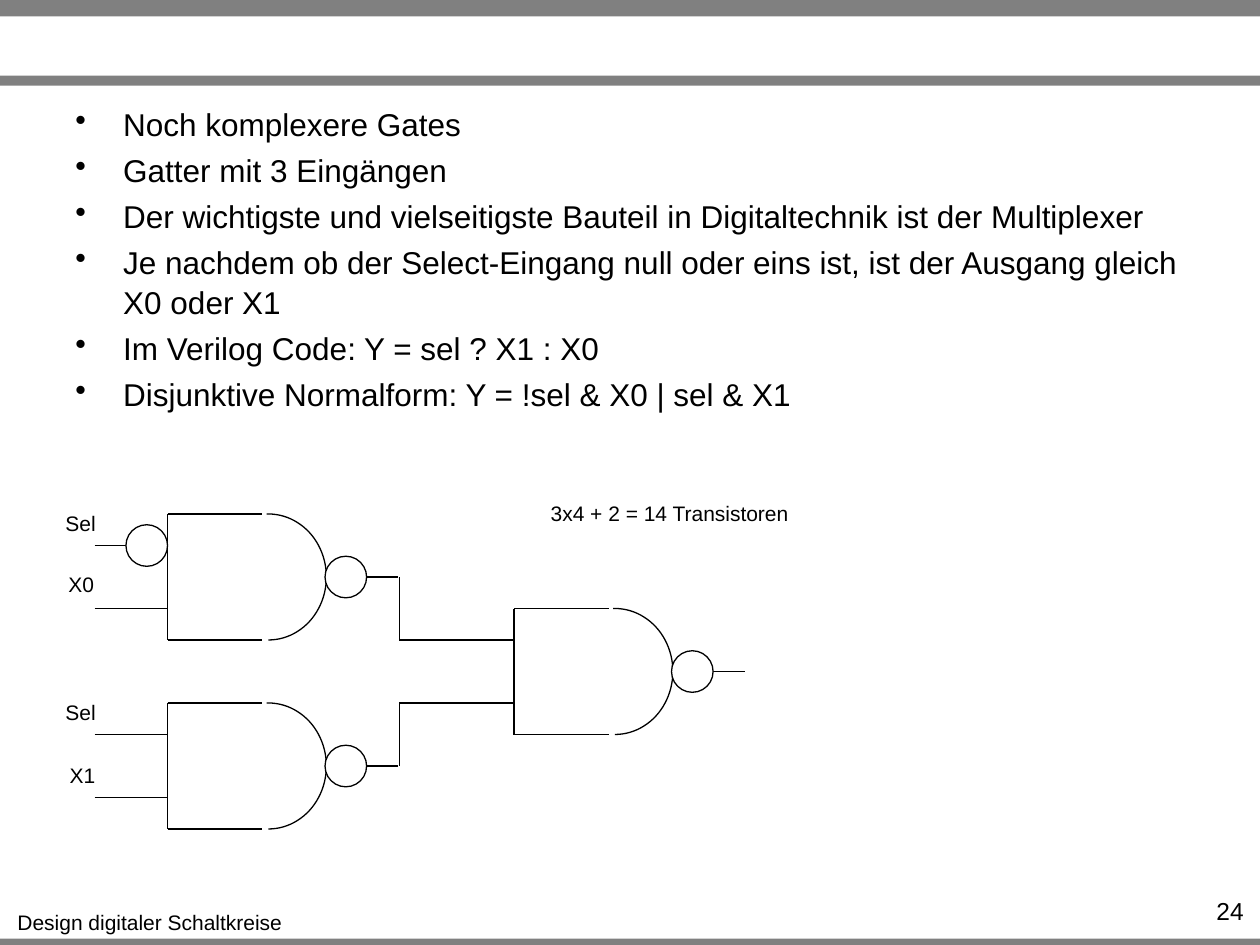
"""Build a slide on the multiplexer made of three NAND gates."""
from dataclasses import dataclass

import pptx
import pptx.dml.color
import pptx.enum.shapes
import pptx.enum.text
import pptx.oxml
import pptx.oxml.ns
import pptx.util
from pptx.util import Inches

COLORS = {"ink": "000000", "bar": "808080", "paper": "FFFFFF"}
FONT = "Arial"
SHAPE = pptx.enum.shapes.MSO_SHAPE
ALIGN = pptx.enum.text.PP_ALIGN
GATE_HEIGHT = 1
STUB = 0.58
BUBBLE = 0.33
BUBBLE_OFFSET = 1.25
INPUT_OFFSETS = (0.25, 0.75)


@dataclass(frozen=True)
class Gate:
    left: float
    top: float
    inverted_select: bool = False


@dataclass(frozen=True)
class Label:
    text: str
    left: float
    top: float
    width: float
    height: float = 0.3
    size: int = 12
    align: ALIGN = ALIGN.CENTER
    wrap: bool = False


BARS = ((0, 0.13), (0.6, 0.08), (7.45, 0.08))
POINTS = (
    "Noch komplexere Gates",
    "Gatter mit 3 Eingängen",
    "Der wichtigste und vielseitigste Bauteil in Digitaltechnik ist der Multiplexer",
    "Je nachdem ob der Select-Eingang null oder eins ist, ist der Ausgang gleich X0 oder X1",
    "Im Verilog Code: Y = sel ? X1 : X0",
    "Disjunktive Normalform: Y = !sel & X0 | sel & X1",
)
GATES = (Gate(1.33, 4.08, True), Gate(1.33, 5.58), Gate(4.08, 4.83))
WIRES = (
    (3.17, 4.58, 3.17, 5.08),
    (3.17, 5.08, 3.75, 5.08),
    (3.17, 5.58, 3.17, 6.08),
    (3.17, 5.58, 3.75, 5.58),
)
LABELS = (
    Label("Design digitaler Schaltkreise", 0.03, 7.17, 2.32),
    Label("24", 9.1, 7.06, 0.87, 0.24, 14, ALIGN.RIGHT, True),
    Label("Sel", 0.42, 4, 0.44),
    Label("X0", 0.44, 4.49, 0.41),
    Label("Sel", 0.42, 5.5, 0.44),
    Label("X1", 0.45, 6, 0.41),
    Label("3x4 + 2 = 14 Transistoren", 4.27, 3.92, 2.09),
)


def rgb(name: str) -> pptx.dml.color.RGBColor:
    """Return a palette colour."""
    return pptx.dml.color.RGBColor.from_string(COLORS[name])


def style_font(font, size: int) -> None:
    """Apply the slide's font in the given size."""
    font.name = FONT
    font.size = pptx.util.Pt(size)
    font.color.rgb = rgb("ink")


def outline(shape) -> None:
    """Give a shape or connector the thin circuit line."""
    shape.line.color.rgb = rgb("ink")
    shape.line.width = pptx.util.Pt(0.75)


def draw_bar(shapes, top: float, height: float) -> None:
    """Draw a full-width grey bar."""
    bar = shapes.add_shape(SHAPE.RECTANGLE, 0, Inches(top), Inches(10), Inches(height))
    bar.shadow.inherit = False
    bar.fill.solid()
    bar.fill.fore_color.rgb = rgb("bar")
    bar.line.fill.background()


def draw_wire(shapes, x1: float, y1: float, x2: float, y2: float) -> None:
    """Draw a straight circuit line."""
    wire = shapes.add_connector(
        pptx.enum.shapes.MSO_CONNECTOR.STRAIGHT,
        Inches(x1), Inches(y1), Inches(x2), Inches(y2),
    )
    outline(wire)
    properties = wire.element.find(pptx.oxml.ns.qn("p:spPr"))
    properties.append(pptx.oxml.parse_xml(f'<a:effectLst {pptx.oxml.ns.nsdecls("a")}/>'))


def draw_bubble(shapes, left: float, middle: float) -> None:
    """Draw an inversion circle centred on a line."""
    bubble = shapes.add_shape(
        SHAPE.OVAL, Inches(left), Inches(middle - BUBBLE / 2), Inches(BUBBLE), Inches(BUBBLE)
    )
    bubble.shadow.inherit = False
    bubble.fill.solid()
    bubble.fill.fore_color.rgb = rgb("paper")
    outline(bubble)


def draw_gate(shapes, gate: Gate) -> None:
    """Draw a NAND gate with its inputs and output."""
    left, top, bottom = gate.left, gate.top, gate.top + GATE_HEIGHT
    middle = top + GATE_HEIGHT / 2
    draw_wire(shapes, left, top, left, bottom)
    for edge in (top, bottom):
        draw_wire(shapes, left, edge, left + 0.75, edge)
    for offset in INPUT_OFFSETS:
        draw_wire(shapes, left - STUB, top + offset, left, top + offset)
    curve = shapes.add_shape(
        SHAPE.ARC, Inches(left + 0.34), Inches(top), Inches(0.92), Inches(GATE_HEIGHT)
    )
    curve.shadow.inherit = False
    curve.adjustments[0] = 161.1
    curve.adjustments[1] = 54
    curve.fill.background()
    outline(curve)
    output = left + BUBBLE_OFFSET
    draw_wire(shapes, output, middle, output + STUB, middle)
    draw_bubble(shapes, output, middle)
    if gate.inverted_select:
        draw_bubble(shapes, left - BUBBLE, top + INPUT_OFFSETS[0])


def draw_label(shapes, label: Label) -> None:
    """Write a single-line label."""
    box = shapes.add_textbox(
        Inches(label.left), Inches(label.top), Inches(label.width), Inches(label.height)
    )
    frame = box.text_frame
    frame.text = label.text
    frame.word_wrap = label.wrap
    paragraph = frame.paragraphs[0]
    paragraph.alignment = label.align
    style_font(paragraph.runs[0].font, label.size)


def draw_points(shapes) -> None:
    """Write the bulleted list."""
    frame = shapes.add_textbox(Inches(0.5), Inches(0.77), Inches(9), Inches(0.74)).text_frame
    frame.word_wrap = True
    frame.text = "\n".join(POINTS)
    for index, paragraph in enumerate(frame.paragraphs):
        properties = paragraph._p.get_or_add_pPr()
        properties.set("marL", str(Inches(0.38)))
        properties.set("indent", str(Inches(-0.38)))
        properties.append(
            pptx.oxml.parse_xml(f'<a:buChar {pptx.oxml.ns.nsdecls("a")} char="•"/>')
        )
        paragraph.line_spacing = 1.05
        paragraph.space_before = pptx.util.Pt(3.6 if index else 0)
        style_font(paragraph.runs[0].font, 18)


def main() -> None:
    """Create and save the slide."""
    deck = pptx.Presentation()
    deck.slide_width, deck.slide_height = Inches(10), Inches(7.5)
    shapes = deck.slides.add_slide(deck.slide_layouts[6]).shapes
    for top, height in BARS:
        draw_bar(shapes, top, height)
    draw_points(shapes)
    for gate in GATES:
        draw_gate(shapes, gate)
    for wire in WIRES:
        draw_wire(shapes, *wire)
    for label in LABELS:
        draw_label(shapes, label)
    deck.save("out.pptx")


if __name__ == "__main__":
    main()
